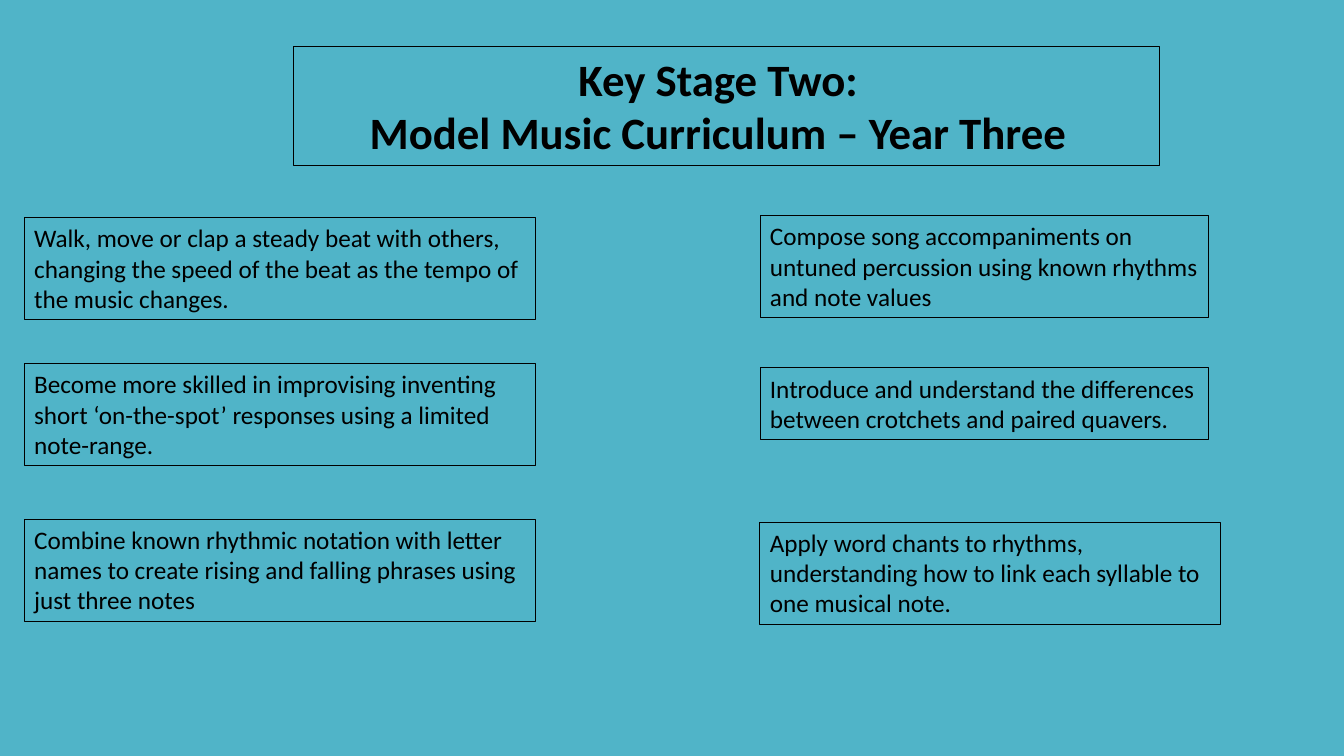
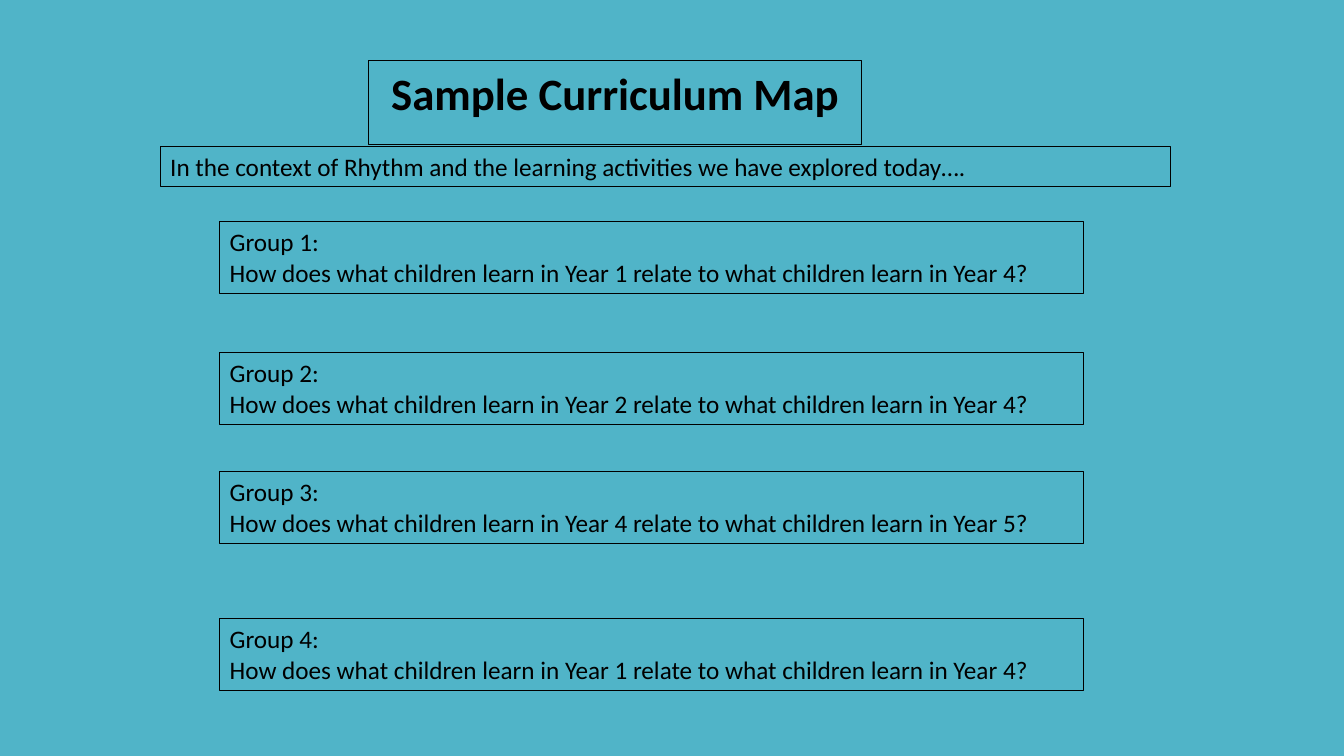
from pptx import Presentation
from pptx import util as u
from pptx.dml.color import RGBColor
from pptx.enum import text

COLORS = {"background": "50B4C8", "ink": "000000"}
WIDTH, HEIGHT = u.Inches(13.333), u.Inches(7.5)
BODY = {"name": "Calibri", "size": u.Pt(18), "bold": False}
HEADING = {"name": "Calibri", "size": u.Pt(32), "bold": True}
LINE_HEIGHT, BOX_PADDING = 4.06, 1.33  # percent of the slide height

PUPILS_WILL = [
    # area (left, top, width), then rows: drop, line count, extra width, text
    ((1.8, 28.8, 38.03), [
        (0, 3, 0, "Walk, move or clap a steady beat with others, changing the speed "
                  "of the beat as the tempo of the music changes."),
        (19.33, 3, 0, "Become more skilled in improvising inventing short "
                      "‘on-the-spot’ responses using a limited note-range."),
        (39.87, 3, 0, "Combine known rhythmic notation with letter names to create "
                      "rising and falling phrases using just three notes"),
    ]),
    ((56.55, 28.53, 33.37), [
        (0, 3, 0, "Compose song accompaniments on untuned percussion using known "
                  "rhythms and note values"),
        (20.13, 2, 0, "Introduce and understand the differences between crotchets "
                      "and paired quavers."),
        (40.53, 3, 0.9, "Apply word chants to rhythms, understanding how to link each "
                        "syllable to one musical note."),
    ]),
]
GROUP_YEARS = [(0, 1, 4), (17.33, 2, 4), (33.07, 4, 5), (52.53, 1, 4)]


def rgb(name):
    return RGBColor.from_string(COLORS[name])


def to_slide(area):
    """Turn left, top, width and height in percent into slide lengths."""
    return [round(share * side / 100)
            for share, side in zip(area, (WIDTH, HEIGHT, WIDTH, HEIGHT))]


def fill_frame(box, lines, style, align):
    """Outline a box and write one paragraph for each line."""
    box.fill.background()
    box.line.color.rgb = rgb("ink")
    box.line.width = u.Pt(0.75)
    frame = box.text_frame
    frame.word_wrap = True
    frame.auto_size = text.MSO_AUTO_SIZE.SHAPE_TO_FIT_TEXT
    frame.vertical_anchor = text.MSO_ANCHOR.TOP
    for index, line in enumerate(lines):
        para = frame.paragraphs[0] if index == 0 else frame.add_paragraph()
        para.alignment = align
        span = para.add_run()
        span.text = line
        for name, value in style.items():
            setattr(span.font, name, value)
        span.font.color.rgb = rgb("ink")


def add_page(deck, area, title_lines, right_inset=0.1):
    page = deck.slides.add_slide(deck.slide_layouts[5])
    title = page.shapes.title
    title.left, title.top, title.width, title.height = to_slide(area)
    fill_frame(title, title_lines, HEADING, text.PP_ALIGN.CENTER)
    title.text_frame.margin_right = u.Inches(right_inset)
    return page


def add_note(page, left, top, width, paragraphs, line_count):
    height = line_count * LINE_HEIGHT + BOX_PADDING
    box = page.shapes.add_textbox(*to_slide((left, top, width, height)))
    fill_frame(box, paragraphs, BODY, text.PP_ALIGN.LEFT)


def add_note_column(page, area, notes):
    left, top, width = area
    for drop, line_count, extra, statement in notes:
        add_note(page, left, top + drop, width + extra, [statement], line_count)


def add_groups(page, area):
    left, top, width = area
    for number, (drop, first, second) in enumerate(GROUP_YEARS, 1):
        question = (f"How does what children learn in Year {first} "
                    f"relate to what children learn in Year {second}?")
        add_note(page, left, top + drop, width, [f"Group {number}:", question], 2)


def build_curriculum(deck):
    page = add_page(deck, (21.83, 6.13, 64.43, 15.73),
                    ["Key Stage Two:", "Model Music Curriculum – Year Three"], 0.26)
    for area, notes in PUPILS_WILL:
        add_note_column(page, area, notes)


def build_map(deck):
    page = add_page(deck, (27.45, 8, 36.68, 8.53), ["Sample Curriculum Map"])
    add_note(page, 11.93, 19.33, 75.15,
             ["In the context of Rhythm and the learning activities "
              "we have explored today…."], 1)
    add_groups(page, (16.35, 29.33, 64.28))


def main():
    deck = Presentation()
    deck.slide_width, deck.slide_height = WIDTH, HEIGHT
    backdrop = deck.slide_master.background.fill
    backdrop.solid()
    backdrop.fore_color.rgb = rgb("background")
    build_curriculum(deck)
    build_map(deck)
    deck.save("out.pptx")


if __name__ == "__main__":
    main()
